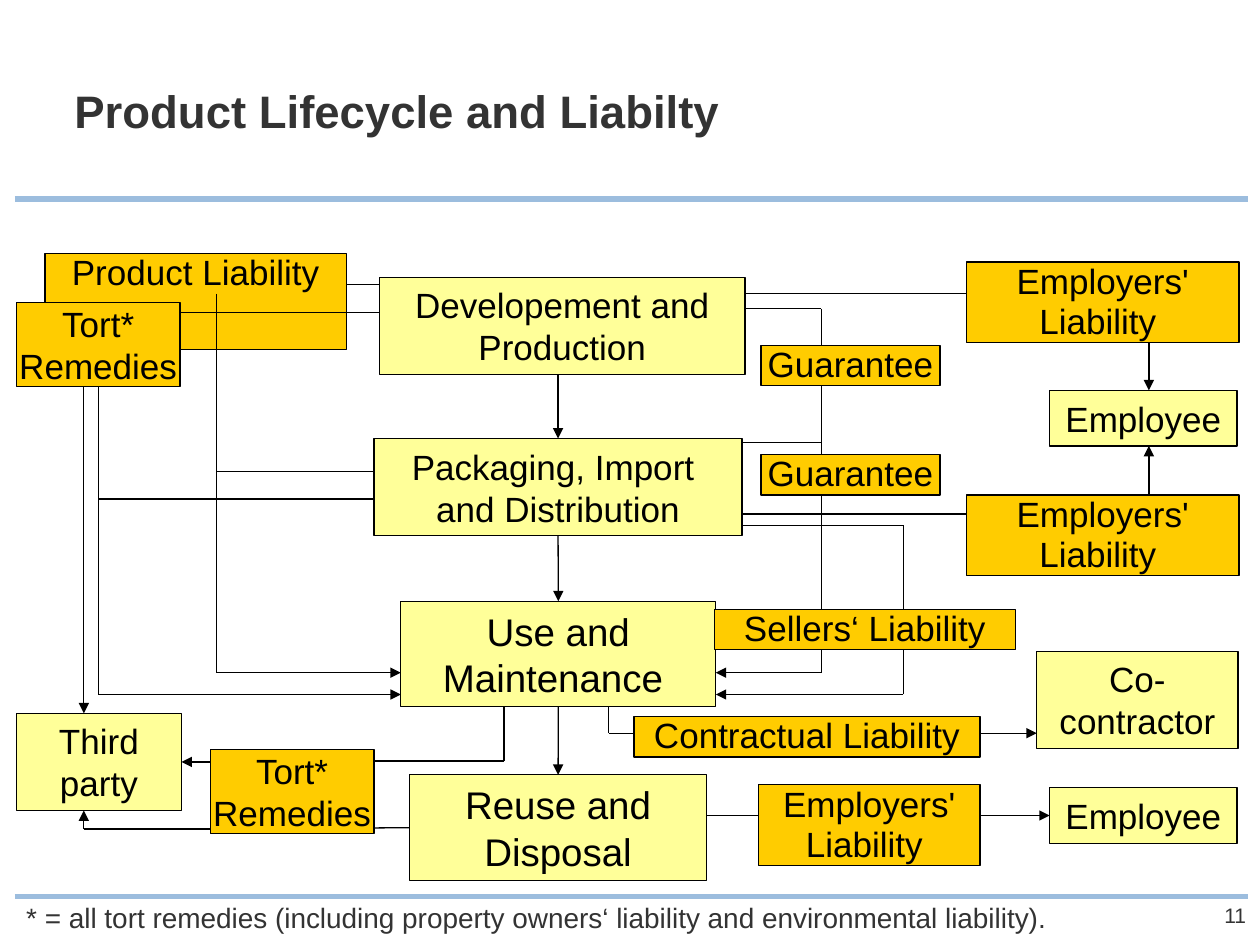
from dataclasses import dataclass
from itertools import pairwise
from typing import Optional

from lxml.etree import SubElement
from pptx import Presentation
from pptx.dml.color import RGBColor
from pptx.enum.shapes import MSO_CONNECTOR as Connector, MSO_SHAPE as Preset
from pptx.enum.text import MSO_ANCHOR as Anchor, MSO_AUTO_SIZE as AutoSize, PP_ALIGN as Align
from pptx.oxml.ns import qn
from pptx.util import Cm, Pt

TOP, LEFT, BOTTOM, RIGHT = range(4)


@dataclass(frozen=True)
class Theme:
    font: str = "Arial"
    ink: str = "000000"
    grey: str = "333333"
    rule: str = "9CBDDE"
    party: str = "FFFF99"
    liability: str = "FFCC00"
    title_size: int = 26
    stage_size: int = 22
    label_size: int = 20
    note_size: int = 16
    number_size: int = 12
    thin: float = 0.75
    thick: float = 3


THEME = Theme()


@dataclass(frozen=True)
class Box:
    key: str
    text: str
    left: float
    top: float
    width: float
    height: float
    is_liability: bool = False
    size: int = THEME.label_size
    spacing: float = 1.0


@dataclass(frozen=True)
class Route:
    """A chain of straight lines; begin and end name a box and its connection site."""
    points: tuple
    arrow: bool = False
    begin: Optional[tuple] = None
    end: Optional[tuple] = None


def liability(key: str, text: str, left: float, top: float, width: float,
              height: float = 0.81, spacing: float = 0.95) -> Box:
    return Box(key, text, left, top, width, height, True, spacing=spacing)


BOXES = (
    Box("development", "Developement and Production", 7.65, 5.59, 7.37, 1.96),
    Box("packaging", "Packaging, Import \nand Distribution", 7.54, 8.84, 7.42, 1.96),
    Box("use", "Use and Maintenance ", 8.08, 12.12, 6.35, 2.13, size=THEME.stage_size),
    Box("reuse", "Reuse and Disposal", 8.25, 15.62, 6, 2.13, size=THEME.stage_size),
    Box("third party", "Third party", 0.33, 14.38, 3.33, 1.96),
    Box("co-contractor", "Co-contractor", 20.9, 13.13, 4.06, 1.96),
    Box("upper employee", "Employee", 21.16, 7.87, 3.78, 1.12),
    Box("lower employee", "Employee", 21.16, 15.88, 3.78, 1.12),
    liability("sellers", "Sellers‘ Liability", 14.4, 12.29, 6.07),
    liability("contractual", " Contractual Liability ", 12.78, 14.45, 6.98),
    liability("upper guarantee", "Guarantee", 15.34, 6.96, 3.61),
    liability("lower guarantee", "Guarantee", 15.34, 9.17, 3.61),
    liability("upper tort", "Tort* Remedies ", 0.33, 6.1, 3.3, 1.7, 1.0),
    liability("lower tort", "Tort*\nRemedies", 4.24, 15.11, 3.3, 1.7, 1.0),
    liability("production employers", "Employers' Liability ", 19.48, 5.28, 5.5, 1.63),
    liability("distribution employers", "Employers' Liability ", 19.48, 9.98, 5.5, 1.63),
    liability("disposal employers", "Employers' Liability ", 15.29, 15.82, 4.47, 1.63),
)

ROUTES = (
    # Lifecycle
    Route(((11.25, 7.55), (11.25, 8.84)), True, end=("packaging", TOP)),
    Route(((11.25, 10.8), (11.25, 12.12)), True, ("packaging", BOTTOM), ("use", TOP)),
    Route(((11.25, 14.25), (11.25, 15.62)), True, ("use", BOTTOM), ("reuse", TOP)),
    # Product liability
    Route(((6.98, 5.74), (7.65, 5.74))),
    Route(((4.37, 5.92), (4.37, 13.56), (8.08, 13.56)), True),
    Route(((4.37, 9.5), (7.54, 9.5))),
    # Tort remedies
    Route(((3.63, 6.3), (7.65, 6.3))),
    Route(((1.98, 7.8), (1.98, 14), (8.08, 14)), True, begin=("upper tort", BOTTOM)),
    Route(((1.98, 10.06), (7.54, 10.06))),
    Route(((1.69, 7.8), (1.69, 14.38)), True),
    Route(((10.16, 14.25), (10.16, 15.34), (7.54, 15.34))),
    Route(((4.24, 15.36), (3.66, 15.36)), True, end=("third party", RIGHT)),
    Route(((7.54, 16.69), (8.25, 16.69)), end=("reuse", LEFT)),
    Route(((4.24, 16.71), (1.69, 16.71), (1.69, 16.34)), True),
    # Guarantees
    Route(((15.02, 6.22), (16.56, 6.22), (16.56, 6.96))),
    Route(((16.56, 7.77), (16.56, 9.17))),
    Route(((14.96, 8.92), (16.56, 8.92))),
    Route(((16.56, 9.98), (16.56, 12.29))),
    Route(((16.56, 13.1), (16.56, 13.56), (14.43, 13.56)), True),
    # Sellers' liability
    Route(((14.96, 10.59), (18.21, 10.59), (18.21, 12.29))),
    Route(((18.21, 13.1), (18.21, 14), (14.43, 14)), True),
    # Contractual liability
    Route(((12.27, 14.25), (12.27, 14.78), (12.78, 14.78))),
    Route(((19.76, 14.78), (20.9, 14.78)), True),
    # Employers' liability
    Route(((15.02, 5.92), (19.48, 5.92))),
    Route(((14.96, 10.36), (19.48, 10.36))),
    Route(((23.16, 6.91), (23.16, 7.87)), True),
    Route(((23.16, 9.98), (23.16, 8.99)), True),
    Route(((14.25, 16.44), (15.29, 16.44))),
    Route(((19.76, 16.44), (21.16, 16.44)), True, end=("lower employee", LEFT)),
)


def place(shape, left: float, top: float, width: float, height: float) -> None:
    shape.left, shape.top = Cm(left), Cm(top)
    shape.width, shape.height = Cm(width), Cm(height)


def write(shape, text: str, *, size: int, color: str = THEME.ink, bold: bool = False,
          align=Align.CENTER, anchor=Anchor.MIDDLE, spacing: float = 1.0,
          side_margin: float = 0, end_margin: float = 0) -> None:
    frame = shape.text_frame
    frame.word_wrap = True
    frame.auto_size = AutoSize.NONE
    frame.vertical_anchor = anchor
    frame.margin_left = frame.margin_right = Cm(side_margin)
    frame.margin_top = frame.margin_bottom = Cm(end_margin)
    paragraph = frame.paragraphs[0]
    paragraph.text = text
    paragraph.alignment = align
    paragraph.line_spacing = spacing
    paragraph.space_before = Pt(0)
    for run in paragraph.runs:
        run.font.name = THEME.font
        run.font.size = Pt(size)
        run.font.bold = bold
        run.font.color.rgb = RGBColor.from_string(color)


def paint(shape, fill: str) -> None:
    shape.fill.solid()
    shape.fill.fore_color.rgb = RGBColor.from_string(fill)
    shape.line.color.rgb = RGBColor.from_string(THEME.ink)
    shape.line.width = Pt(THEME.thin)


def draw_box(slide, box: Box):
    shape = slide.shapes.add_shape(Preset.RECTANGLE, 0, 0, 0, 0)
    place(shape, box.left, box.top, box.width, box.height)
    shape.shadow.inherit = False
    paint(shape, THEME.liability if box.is_liability else THEME.party)
    side, end = (0, 0) if box.is_liability else (0.25, 0.13)
    write(shape, box.text, size=box.size, spacing=box.spacing, side_margin=side, end_margin=end)
    return shape


def draw_line(slide, start: tuple, finish: tuple, *, color: str = THEME.ink,
              width: float = THEME.thin, arrow: bool = False):
    line = slide.shapes.add_connector(Connector.STRAIGHT, *map(Cm, start + finish))
    line.line.color.rgb = RGBColor.from_string(color)
    line.line.width = Pt(width)
    if arrow:
        SubElement(line.line._get_or_add_ln(), qn("a:tailEnd"), type="triangle")
    SubElement(line._element.spPr, qn("a:effectLst"))
    return line


def draw_route(slide, route: Route, shapes: dict) -> None:
    segments = list(pairwise(route.points))
    lines = [draw_line(slide, *segment, arrow=route.arrow and segment is segments[-1])
             for segment in segments]
    if route.begin:
        key, site = route.begin
        lines[0].begin_connect(shapes[key], site)
    if route.end:
        key, site = route.end
        lines[-1].end_connect(shapes[key], site)


def fill_placeholders(slide) -> None:
    title, body = slide.shapes.title, slide.placeholders[1]
    place(title, 1.5, 1.8, 18.39, 2.1)
    write(title, "Product Lifecycle and Liabilty", size=THEME.title_size, color=THEME.grey,
          bold=True, align=Align.LEFT, anchor=Anchor.TOP, spacing=0.9)
    place(body, 0.91, 5.11, 6.07, 1.93)
    paint(body, THEME.liability)
    properties = body.text_frame.paragraphs[0]._p.get_or_add_pPr()
    properties.set("marL", "0")
    properties.set("indent", "0")
    SubElement(properties, qn("a:buNone"))
    write(body, "Product Liability", size=THEME.label_size, anchor=Anchor.TOP, spacing=0.95)


def main() -> None:
    presentation = Presentation()
    presentation.slide_width, presentation.slide_height = Cm(25.4), Cm(19.05)
    slide = presentation.slides.add_slide(presentation.slide_layouts[1])
    fill_placeholders(slide)
    for height in (4.01, 18.08):
        draw_line(slide, (0.3, height), (25.15, height), color=THEME.rule, width=THEME.thick)
    shapes = {box.key: draw_box(slide, box) for box in BOXES}
    for route in ROUTES:
        draw_route(slide, route, shapes)
    note = slide.shapes.add_textbox(Cm(0.53), Cm(18.21), Cm(23.5), Cm(0.64))
    write(note, "* = all tort remedies (including property owners‘ liability and "
          "environmental liability).", size=THEME.note_size, color=THEME.grey,
          align=Align.LEFT, anchor=Anchor.TOP, spacing=0.95)
    number = slide.shapes.add_textbox(Cm(24.13), Cm(18.19), Cm(0.99), Cm(0.51))
    write(number, "11", size=THEME.number_size, color=THEME.grey, align=Align.RIGHT,
          anchor=Anchor.TOP)
    presentation.save("out.pptx")


if __name__ == "__main__":
    main()
